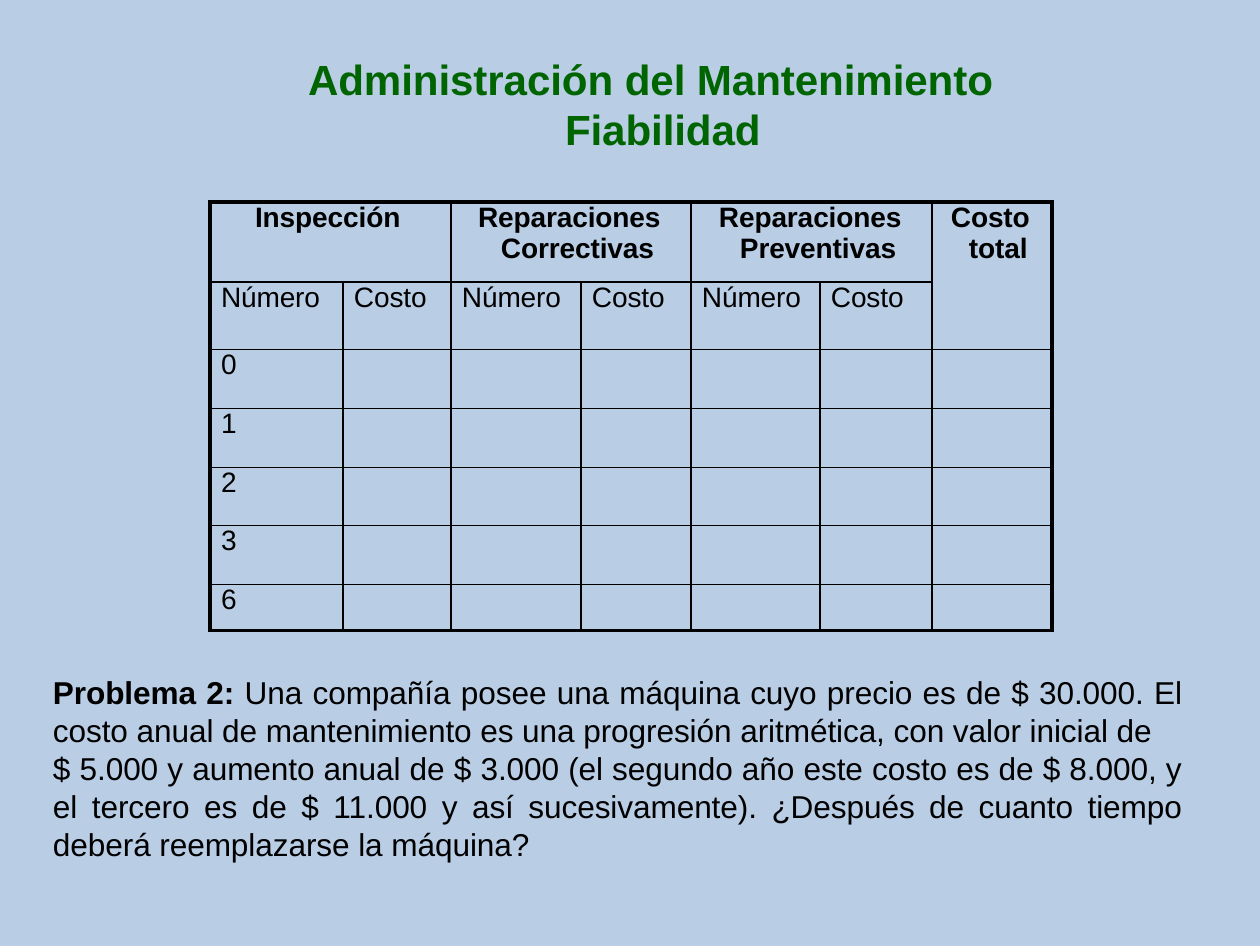
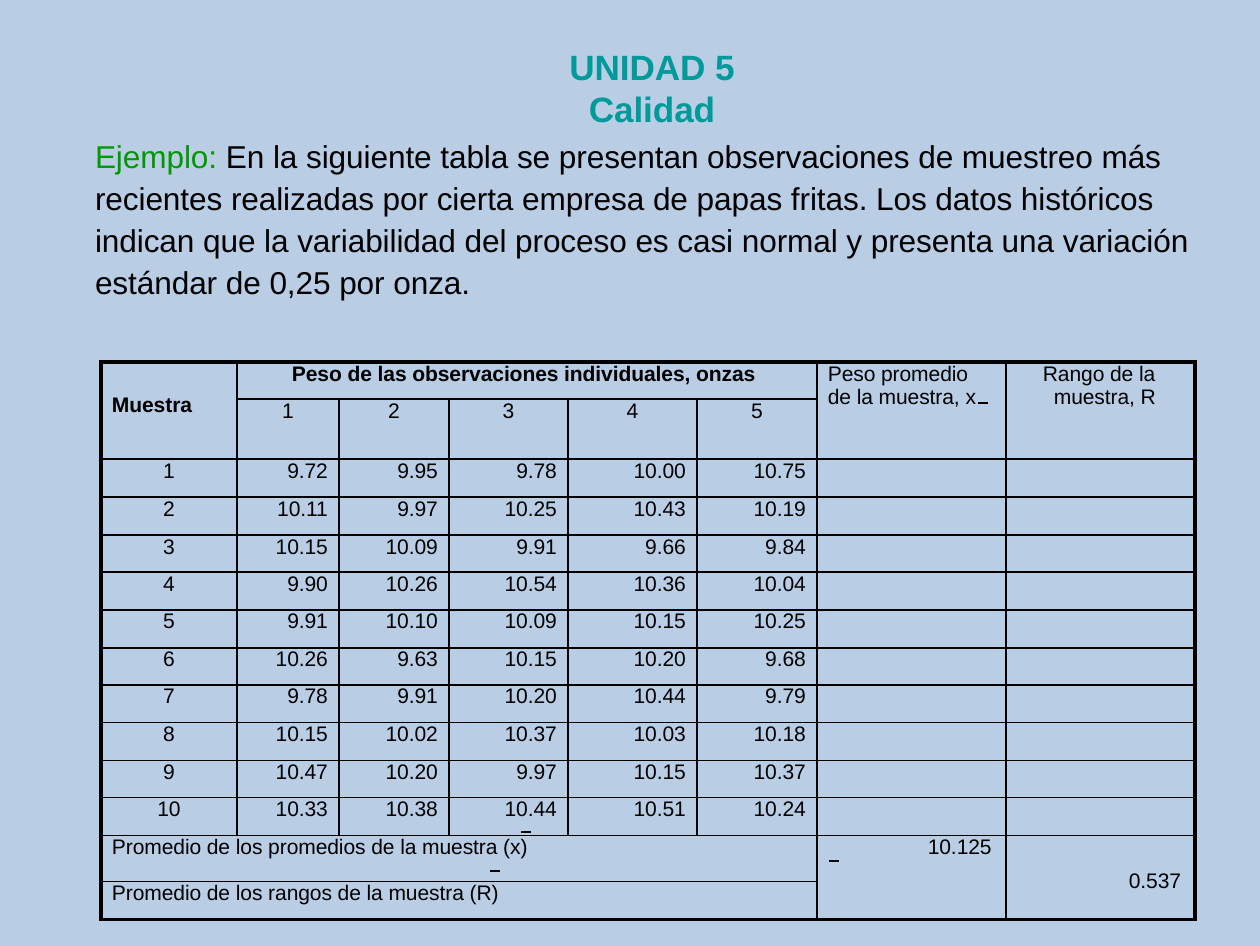
import pptx
import pptx.util
import pptx.dml.color
import pptx.enum.text
import pptx.enum.shapes
import pptx.oxml
import pptx.oxml.ns
from lxml import etree

RGB = pptx.dml.color.RGBColor
Pt = pptx.util.Pt
ALIGN = pptx.enum.text.PP_ALIGN
qn = pptx.oxml.ns.qn

# Shared look
SLIDE_SIZE = (Pt(718), Pt(539))
PX_PER_INCH = 126.35
BACK = RGB(0xB9, 0xCD, 0xE5)
BLACK = RGB(0, 0, 0)
DARK_GREEN = RGB(0, 0x65, 0)
GREEN = RGB(0, 0x9A, 0)
TEAL = RGB(0, 0x9A, 0x9A)
FONT = "Arial"
TRACKING = "-5"
OUTER, INNER = 2.25, 1
NO_STYLE = "{2D5ABB26-0587-4C30-8999-92F81FD0307C}"
TITLE_BOX = (257, 45, 748, 118)
PAD = 11

# Slide 1 content
TITLE_1 = ["Administración del Mantenimiento\vFiabilidad"]
PROBLEM = [
    [("Problema 2: ", {"bold": True}),
     ("Una compañía posee una máquina cuyo precio es de $ 30.000. El costo "
      "anual de mantenimiento es una progresión aritmética, con valor "
      "inicial de", {})],
    "$ 5.000 y aumento anual de $ 3.000 (el segundo año este costo es de "
    "$ 8.000, y el tercero es de $ 11.000 y así sucesivamente). ¿Después de "
    "cuanto tiempo deberá reemplazarse la máquina?",
]
COST_COLS = [133, 108, 130, 110, 129, 112, 120]
COST_ROWS = [80, 67, 59, 59, 58, 59, 46]
# row, column, rows spanned, columns spanned, text, format
COST_HEADS = [
    (0, 0, 1, 2, "Inspección", {"left": 45}),
    (0, 2, 1, 2, "Reparaciones\vCorrectivas", {"left": 50, "first": -23}),
    (0, 4, 1, 2, "Reparaciones\vPreventivas", {"left": 49, "first": -21}),
    (0, 6, 2, 1, "Costo\vtotal", {"left": 37, "first": -18}),
]
INSPECTIONS = ["0", "1", "2", "3", "6"]

# Slide 2 content
TITLE_2 = ["UNIDAD 5", "Calidad"]
EXAMPLE = [[
    ("Ejemplo: ", {"color": GREEN}),
    ("En la siguiente tabla se presentan observaciones de muestreo más "
     "recientes realizadas por cierta empresa de papas fritas. Los datos "
     "históricos indican que la variabilidad del proceso es casi normal y "
     "presenta una variación estándar de 0,25 por onza.", {}),
]]
SAMPLE_COLS = [136, 102, 110, 119, 129, 120, 189, 189]
SAMPLE_ROWS = [37, 60] + [38, 38, 37] * 3 + [38, 46, 38]
SAMPLE_SPANS = [
    (0, 0, 2, 1, "Muestra", {"left": PAD, "top": 31, "bold": True}),
    (0, 1, 1, 5, "Peso de las observaciones individuales, onzas",
     {"left": 55, "bold": True}),
    (0, 6, 2, 1, "Peso promedio\vde la muestra, x", {"left": PAD}),
    (0, 7, 2, 1, "Rango de la\vmuestra, R", {"left": 48, "first": -11}),
    (12, 0, 1, 6, "Promedio de los promedios de la muestra (x)", {"left": PAD}),
    (12, 6, 2, 1, "10.125", {"left": 111}),
    (12, 7, 2, 1, "0.537", {"left": 123, "top": 34}),
    (13, 0, 1, 6, "Promedio de los rangos de la muestra (R)", {"left": PAD}),
]
WEIGHTS = [
    ("9.72", "9.95", "9.78", "10.00", "10.75"),
    ("10.11", "9.97", "10.25", "10.43", "10.19"),
    ("10.15", "10.09", "9.91", "9.66", "9.84"),
    ("9.90", "10.26", "10.54", "10.36", "10.04"),
    ("9.91", "10.10", "10.09", "10.15", "10.25"),
    ("10.26", "9.63", "10.15", "10.20", "9.68"),
    ("9.78", "9.91", "10.20", "10.44", "9.79"),
    ("10.15", "10.02", "10.37", "10.03", "10.18"),
    ("10.47", "10.20", "9.97", "10.15", "10.37"),
    ("10.33", "10.38", "10.44", "10.51", "10.24"),
]
MEAN_BARS = [(829, 861), (978, 403), (521, 832), (490, 871)]
BAR_LENGTH = 10


def px(n):
    return pptx.util.Emu(round(n * 914400 / PX_PER_INCH))


def write(tf, paragraphs, size, color=BLACK, bold=False, align=ALIGN.LEFT,
          left=0, first=0, right=0, top=0, spacing=None):
    """Fill a text frame; each paragraph is a string or a list of runs."""
    tf.margin_left = tf.margin_bottom = 0
    tf.margin_right, tf.margin_top = px(right), px(top)
    tf.word_wrap = True
    tf.vertical_anchor = pptx.enum.text.MSO_ANCHOR.TOP
    for i, runs in enumerate(paragraphs):
        p = tf.paragraphs[0] if i == 0 else tf.add_paragraph()
        p.alignment = align
        if spacing:
            p.line_spacing = spacing
        pPr = p._p.get_or_add_pPr()
        pPr.set("marL", str(px(left)))
        pPr.set("indent", str(px(first)))
        for text, own in [(runs, {})] if isinstance(runs, str) else runs:
            for j, line in enumerate(text.split("\v")):
                if j:
                    p.add_line_break()
                r = p.add_run()
                r.text = line
                r.font.name, r.font.size = FONT, Pt(size)
                r.font.bold = own.get("bold", bold)
                r.font.color.rgb = own.get("color", color)
                r._r.get_or_add_rPr().set("spc", TRACKING)


def add_slide(prs, title, **fmt):
    s = prs.slides.add_slide(prs.slide_layouts[5])
    sp = s.shapes.title
    sp.left, sp.top, sp.width, sp.height = map(px, TITLE_BOX)
    sp.text_frame.auto_size = pptx.enum.text.MSO_AUTO_SIZE.NONE
    write(sp.text_frame, title, bold=True, **fmt)
    return s


def add_text(s, box, paragraphs, **fmt):
    sp = s.shapes.add_textbox(*map(px, box))
    write(sp.text_frame, paragraphs, **fmt)


def set_borders(cell, widths):
    tcPr = cell._tc.get_or_add_tcPr()
    for i, (side, width) in enumerate(widths):
        ln = etree.Element(qn("a:ln" + side), w=str(Pt(width)))
        fill = etree.SubElement(ln, qn("a:solidFill"))
        etree.SubElement(fill, qn("a:srgbClr"), val=str(BLACK))
        tcPr.insert(i, ln)


def add_grid(s, left, top, cols, rows, cells, size):
    """Table with a thick frame and thin inner lines."""
    n_rows, n_cols = len(rows), len(cols)
    table = s.shapes.add_table(n_rows, n_cols, px(left), px(top),
                               px(sum(cols)), px(sum(rows))).table
    table.first_row = table.horz_banding = False
    table._tbl.tblPr.find(qn("a:tableStyleId")).text = NO_STYLE
    for col, width in zip(table.columns, cols):
        col.width = px(width)
    for row, height in zip(table.rows, rows):
        row.height = px(height)
    for r, c, down, across, text, fmt in cells:
        if down * across > 1:
            table.cell(r, c).merge(table.cell(r + down - 1, c + across - 1))
        write(table.cell(r, c).text_frame, [text], size, **fmt)
        # Cell insets belong to the cell itself
        table.cell(r, c).margin_right = px(fmt.get("right", 0))
        table.cell(r, c).margin_top = px(fmt.get("top", 0))
    for r in range(n_rows):
        for c in range(n_cols):
            cell = table.cell(r, c)
            cell.fill.background()
            cell.margin_left = cell.margin_bottom = 0
            if not cell.text_frame.text:
                cell.margin_right = cell.margin_top = 0
                # Keep empty cells from stretching their row
                etree.SubElement(cell.text_frame.paragraphs[0]._p,
                                 qn("a:endParaRPr"), sz=str(size * 100))
            if cell.is_spanned:
                continue
            end_r = r + (cell.span_height if cell.is_merge_origin else 1)
            end_c = c + (cell.span_width if cell.is_merge_origin else 1)
            edges = [("L", c == 0), ("R", end_c == n_cols),
                     ("T", r == 0), ("B", end_r == n_rows)]
            set_borders(cell, [(side, OUTER if edge else INNER)
                               for side, edge in edges])


def add_bar(s, x, y):
    line = s.shapes.add_connector(pptx.enum.shapes.MSO_CONNECTOR.STRAIGHT,
                                  px(x), px(y), px(x + BAR_LENGTH), px(y))
    line.line.color.rgb, line.line.width = BLACK, Pt(0.75)
    etree.SubElement(line._element.spPr, qn("a:effectLst"))


def maintenance_slide(prs):
    s = add_slide(prs, TITLE_1, size=24, color=DARK_GREEN,
                  left=308, first=-257, top=8)
    add_text(s, (52, 673, 1130, 191), PROBLEM, size=18,
             align=ALIGN.JUSTIFY, left=1)
    cells = [(r, c, down, across, text, dict(fmt, bold=True))
             for r, c, down, across, text, fmt in COST_HEADS]
    cells += [(1, c, 1, 1, ("Número", "Costo")[c % 2], {"left": PAD})
              for c in range(6)]
    cells += [(r, 0, 1, 1, n, {"left": PAD})
              for r, n in enumerate(INSPECTIONS, 2)]
    add_grid(s, 210, 202, COST_COLS, COST_ROWS, cells, 16)


def quality_slide(prs):
    s = add_slide(prs, TITLE_2, size=20, color=TEAL,
                  align=ALIGN.CENTER, left=42)
    add_text(s, (94, 133, 1103, 168), EXAMPLE, size=18, left=1, spacing=1.11)
    centred = {"align": ALIGN.CENTER}
    cells = SAMPLE_SPANS + [(1, c, 1, 1, str(c), centred) for c in range(1, 6)]
    for r, weights in enumerate(WEIGHTS, 2):
        cells.append((r, 0, 1, 1, str(r - 1), centred))
        cells += [(r, c, 1, 1, w, {"align": ALIGN.RIGHT, "right": PAD})
                  for c, w in enumerate(weights, 1)]
    add_grid(s, 101, 362, SAMPLE_COLS, SAMPLE_ROWS, cells, 12)
    for x, y in MEAN_BARS:
        add_bar(s, x, y)


def main():
    prs = pptx.Presentation()
    prs.slide_width, prs.slide_height = SLIDE_SIZE
    fill = prs.slide_master.background.fill
    fill.solid()
    fill.fore_color.rgb = BACK
    maintenance_slide(prs)
    quality_slide(prs)
    prs.save("out.pptx")


if __name__ == "__main__":
    main()
